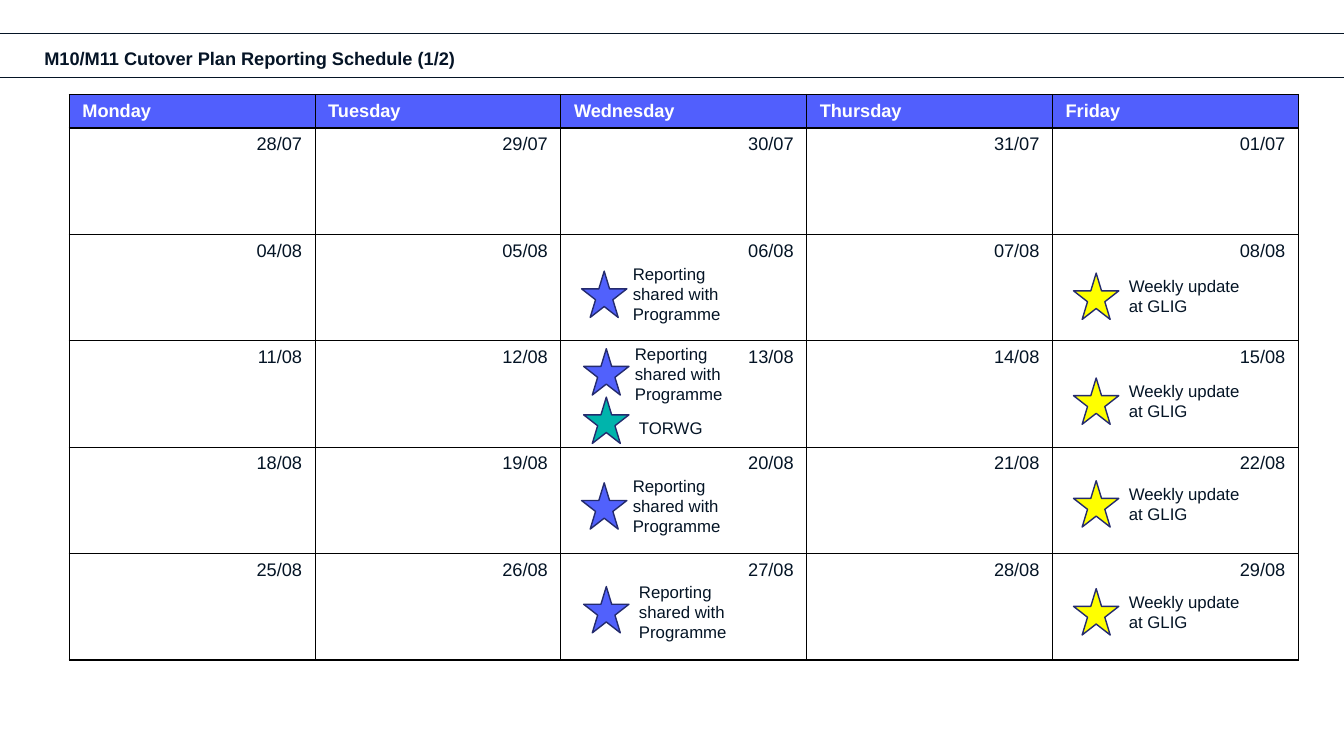
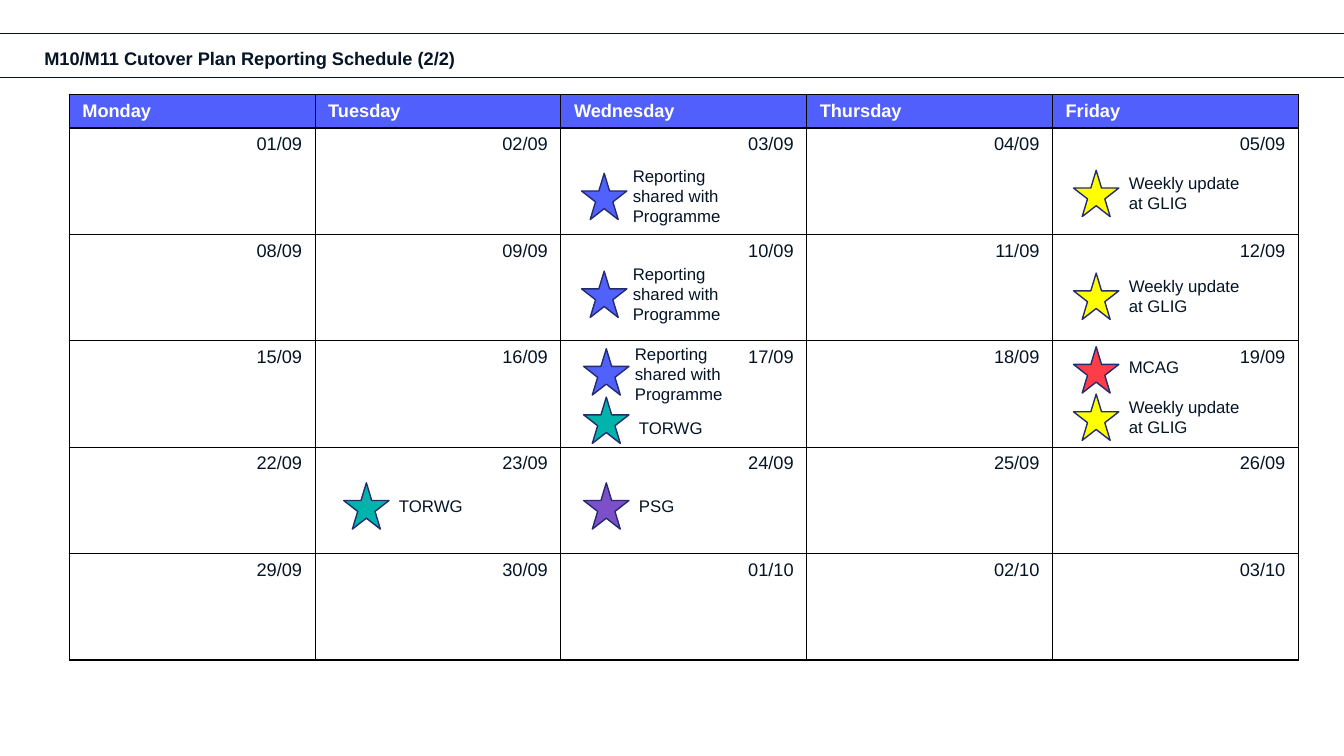
from lxml import etree
from pptx import Presentation
from pptx.dml.color import RGBColor
from pptx.enum.shapes import MSO_CONNECTOR, MSO_SHAPE
from pptx.enum.text import MSO_ANCHOR, MSO_AUTO_SIZE, PP_ALIGN
from pptx.oxml.ns import qn
from pptx.util import Pt

STRAIGHT, STAR = MSO_CONNECTOR.STRAIGHT, MSO_SHAPE.STAR_5_POINT
LEFT, RIGHT = PP_ALIGN.LEFT, PP_ALIGN.RIGHT
TOP, NO_FIT = MSO_ANCHOR.TOP, MSO_AUTO_SIZE.NONE

# Shared look
FONT = "Arial"
INK, TITLE_INK, WHITE, BLACK = "041425", "051426", "FFFFFF", "000000"
HEADER_BLUE, STAR_EDGE = "515FFD", "242B6E"
SLIDE_W, SLIDE_H = 960, 540
TITLE_BOX = (24.5, 31.7, 408, 16.6)
RULE_TOPS = (24, 55.4)

# Calendar grid
CALENDAR_BOX = (49.5, 67.5, 878, 404)
HEADER_H = 24
DAYS = ("Monday", "Tuesday", "Wednesday", "Thursday", "Friday")
MON, TUE, WED, THU, FRI = range(5)
STAR_W, STAR_H = 32.4, 33.1
LABEL_W, LINE_H, LABEL_PADDING = 101.5, 14.6, 7.2

# Kinds of event: label, star colour, lines of label, label distance from star's left
REPORTING = ("Reporting shared with Programme", "5161FC", 3, 29.5)
WEEKLY = ("Weekly update at GLIG", "FFFF00", 2, 32.4)
TORWG = ("TORWG", "00B4AC", 1, 32.4)
PSG = ("PSG", "7D4FC9", 1, 32.4)
MCAG = ("MCAG", "FF3C49", 1, 32.4)

# Events: week, day, kind, star offset in the day cell, label nudge
SHARED_EVENTS = [
    (1, WED, REPORTING, (14.7, 26.2), (0, 0)),
    (1, FRI, WEEKLY, (14.9, 27.6), (0, 0)),
    (2, WED, REPORTING, (16.2, 5.6), (0, 1.8)),
    (2, WED, TORWG, (16.2, 40.2), (0, 5.8)),
]
SCHEDULES = [
    ("M10/M11 Cutover Plan Reporting Schedule (1/2)",
     ["28/07 29/07 30/07 31/07 01/07",
      "04/08 05/08 06/08 07/08 08/08",
      "11/08 12/08 13/08 14/08 15/08",
      "18/08 19/08 20/08 21/08 22/08",
      "25/08 26/08 27/08 28/08 29/08"],
     [(2, FRI, WEEKLY, (14.9, 26.5), (0, 0)),
      (3, WED, REPORTING, (14.7, 25.4), (0, 0)),
      (3, FRI, WEEKLY, (14.9, 23.9), (0, 0)),
      (4, WED, REPORTING, (16.2, 23.5), (2.9, 1.8)),
      (4, FRI, WEEKLY, (14.9, 25), (0, 0))]),
    ("M10/M11 Cutover Plan Reporting Schedule (2/2)",
     ["01/09 02/09 03/09 04/09 05/09",
      "08/09 09/09 10/09 11/09 12/09",
      "15/09 16/09 17/09 18/09 19/09",
      "22/09 23/09 24/09 25/09 26/09",
      "29/09 30/09 01/10 02/10 03/10"],
     [(0, WED, REPORTING, (14.7, 32.3), (0, 0)),
      (0, FRI, WEEKLY, (14.9, 30.2), (0, 0)),
      (2, FRI, MCAG, (14.9, 4.2), (0, -1.8)),
      (2, FRI, WEEKLY, (14.9, 38), (0, 0)),
      (3, TUE, TORWG, (20.4, 25.4), (0, 0)),
      (3, WED, PSG, (16.2, 25.4), (0, 0))]),
]


def rgb(hex_colour):
    return RGBColor.from_string(hex_colour)


def points(*lengths):
    return [Pt(length) for length in lengths]


def write(frame, text, size, colour, bold=False, align=LEFT):
    frame.text = text
    paragraph = frame.paragraphs[0]
    paragraph.alignment = align
    font = paragraph.runs[0].font
    font.name, font.size, font.bold = FONT, Pt(size), bold
    font.color.rgb = rgb(colour)
    return paragraph


def set_up_layout(layout, slide):
    """Place the title and the two rules on the layout, drawing the rules by way of a slide."""
    title = layout.placeholders[0]
    title.left, title.top, title.width, title.height = points(*TITLE_BOX)
    for top in RULE_TOPS:
        rule = slide.shapes.add_connector(STRAIGHT, *points(0, top, SLIDE_W, top))
        rule.line.color.rgb = rgb(INK)
        rule.line.width = Pt(0.5)
        etree.SubElement(rule.element.spPr, qn("a:effectLst"))
        layout.shapes.element.append(rule.element)


def add_title(slide, text):
    frame = slide.shapes.title.text_frame
    paragraph = write(frame, text, 13, TITLE_INK, bold=True)
    paragraph.line_spacing = 0.9
    frame.vertical_anchor, frame.auto_size = TOP, NO_FIT


def add_borders(cell):
    properties = cell._tc.get_or_add_tcPr()
    for side in ("a:lnL", "a:lnR", "a:lnT", "a:lnB"):
        border = etree.SubElement(properties, qn(side), w=str(Pt(1)))
        fill = etree.SubElement(border, qn("a:solidFill"))
        etree.SubElement(fill, qn("a:srgbClr"), val=BLACK)


def format_cell(cell, text, is_header):
    cell.margin_left = cell.margin_right = Pt(9.4)
    cell.margin_top = cell.margin_bottom = Pt(4.5)
    add_borders(cell)
    if is_header:
        cell.fill.solid()
        cell.fill.fore_color.rgb = rgb(HEADER_BLUE)
        write(cell.text_frame, text, 13, WHITE, bold=True)
    else:
        cell.fill.background()
        write(cell.text_frame, text, 13, INK, align=RIGHT)


def add_event(slide, left, top, kind, nudge):
    """Draw a star at the given place, with its label centred on the star's height."""
    text, colour, line_count, label_dx = kind
    star = slide.shapes.add_shape(STAR, *points(left, top, STAR_W, STAR_H))
    star.shadow.inherit = False
    star.fill.solid()
    star.fill.fore_color.rgb = rgb(colour)
    star.line.color.rgb = rgb(STAR_EDGE)
    star.line.width = Pt(1)

    label_h = line_count * LINE_H + LABEL_PADDING
    label_left = left + label_dx + nudge[0]
    label_top = top + (STAR_H - label_h) / 2 + nudge[1]
    label = slide.shapes.add_textbox(*points(label_left, label_top, LABEL_W, label_h))
    label.text_frame.word_wrap = True
    write(label.text_frame, text, 12, INK)


def add_calendar(slide, box, weeks, events):
    left, top, width, height = box
    day_w = width / len(DAYS)
    week_h = (height - HEADER_H) / len(weeks)

    # Table of dates
    rows = [DAYS] + [week.split() for week in weeks]
    calendar = slide.shapes.add_table(len(rows), len(DAYS), *points(*box)).table
    calendar.horz_banding = False
    for column in calendar.columns:
        column.width = Pt(day_w)
    for index, texts in enumerate(rows):
        calendar.rows[index].height = Pt(week_h if index else HEADER_H)
        for day, text in enumerate(texts):
            format_cell(calendar.cell(index, day), text, index == 0)

    # Events in their day cells
    for week, day, kind, (dx, dy), nudge in events:
        add_event(slide, left + day * day_w + dx,
                  top + HEADER_H + week * week_h + dy, kind, nudge)


def main():
    deck = Presentation()
    deck.slide_width, deck.slide_height = points(SLIDE_W, SLIDE_H)
    layout = deck.slide_layouts[5]
    slides = [deck.slides.add_slide(layout) for _ in SCHEDULES]
    set_up_layout(layout, slides[0])
    for slide, (title, weeks, events) in zip(slides, SCHEDULES):
        add_title(slide, title)
        add_calendar(slide, CALENDAR_BOX, weeks, SHARED_EVENTS + events)
    deck.save("out.pptx")


if __name__ == "__main__":
    main()
